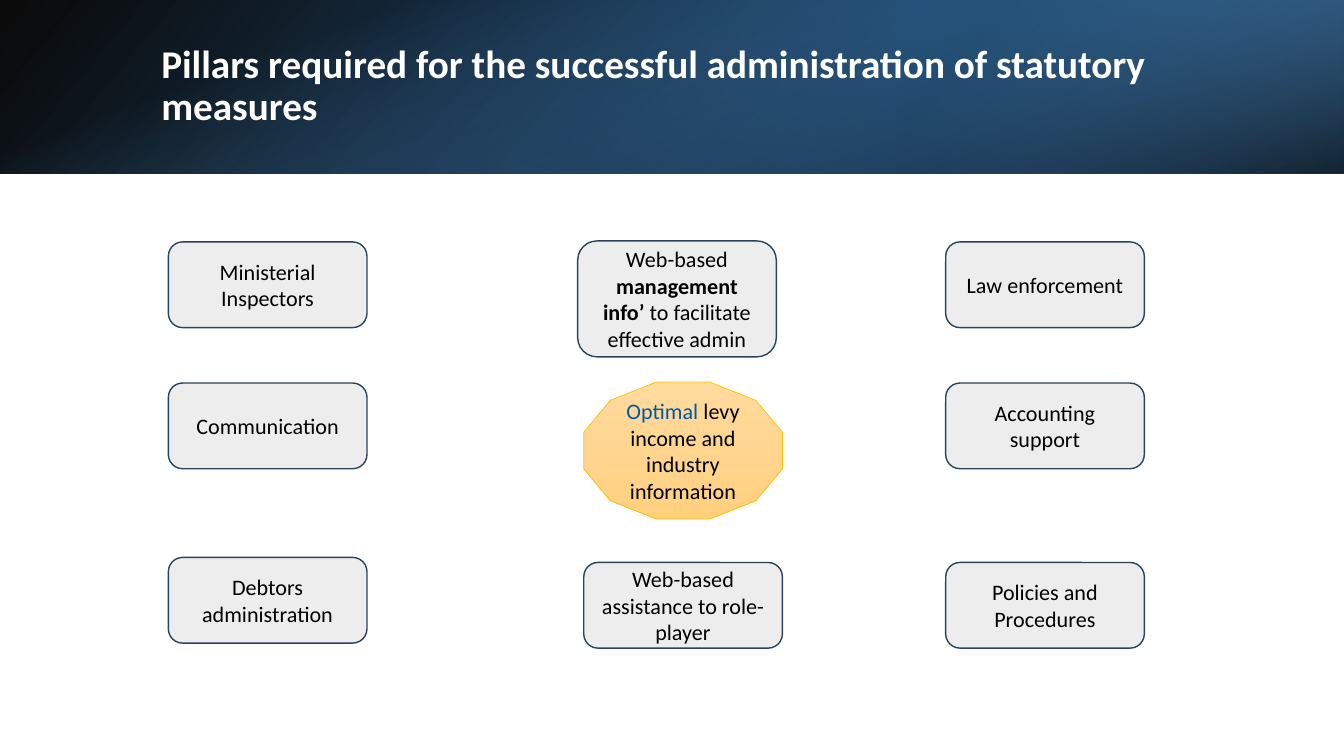
from dataclasses import dataclass

from lxml.etree import SubElement
from pptx import Presentation
from pptx.dml.color import RGBColor
from pptx.enum.shapes import MSO_SHAPE
from pptx.enum.text import MSO_ANCHOR, MSO_AUTO_SIZE, PP_ALIGN
from pptx.oxml.ns import qn
from pptx.shapes.autoshape import Shape
from pptx.slide import Slide
from pptx.text.text import TextFrame
from pptx.util import Inches, Pt


@dataclass(frozen=True)
class Theme:
    font: str = "Calibri"
    title_size: float = 28
    body_size: float = 15.8
    title: str = "FFFFFF"
    text: str = "000000"
    accent: str = "0057A5"
    pillar_fill: str = "EDEDED"
    pillar_line: str = "28445D"
    goal_line: str = "FFC000"


@dataclass(frozen=True)
class Stop:
    position: int
    color: str
    opacity: int = 100


@dataclass(frozen=True)
class Band:
    left: float
    top: float
    width: float
    height: float
    angle: int
    stops: tuple[Stop, ...]
    rotation: int = 0
    flipped: bool = False


@dataclass(frozen=True)
class Run:
    text: str
    bold: bool = False
    color: str | None = None


@dataclass(frozen=True)
class Pillar:
    left: float
    top: float
    runs: tuple[Run, ...]
    height: float = 0.85


THEME = Theme()
SLIDE_WIDTH, SLIDE_HEIGHT = 13.33, 7.5
BAND_HEIGHT = 1.72
PILLAR_WIDTH = 1.97
LEFT, MIDDLE, RIGHT = 1.67, 5.79, 9.38
TOP_ROW, CENTER_ROW, BOTTOM_ROW = 2.4, 3.8, 5.58
TITLE = "Pillars required for the successful administration of statutory measures"

BANDS = (
    Band(0, 0, SLIDE_WIDTH, BAND_HEIGHT, 140,
         (Stop(0, "000000", 96), Stop(100, "2E75B6")), flipped=True),
    Band(8.89, 0, 4.44, BAND_HEIGHT, 320,
         (Stop(19, "1F4E79", 68), Stop(100, "5B9BD5", 79)), rotation=180, flipped=True),
    Band((SLIDE_WIDTH - BAND_HEIGHT) / 2, (BAND_HEIGHT - SLIDE_WIDTH) / 2,
         BAND_HEIGHT, SLIDE_WIDTH, 340,
         (Stop(23, "5B9BD5", 0), Stop(99, "000000", 74)), rotation=90),
)
GOAL_STOPS = (Stop(0, "FFDB9E"), Stop(50, "FFD590"), Stop(100, "FFD07C"))
GOAL_RUNS = (Run("Optimal", color=THEME.accent), Run(" levy income and industry information"))
PILLARS = (
    Pillar(LEFT, TOP_ROW, (Run("Ministerial Inspectors"),)),
    Pillar(LEFT, CENTER_ROW, (Run("Communication"),)),
    Pillar(LEFT, 5.53, (Run("Debtors administration"),)),
    Pillar(5.73, 2.39, (Run("Web-based "), Run("management info’", bold=True),
                        Run(" to facilitate effective admin")), height=1.15),
    Pillar(MIDDLE, BOTTOM_ROW, (Run("Web-based assistance to role-player"),)),
    Pillar(RIGHT, TOP_ROW, (Run("Law enforcement"),)),
    Pillar(RIGHT, CENTER_ROW, (Run("Accounting support"),)),
    Pillar(RIGHT, BOTTOM_ROW, (Run("Policies and Procedures"),)),
)


def write_text(frame: TextFrame, runs: tuple[Run, ...], *, size: float, color: str,
               align: PP_ALIGN = PP_ALIGN.CENTER, space_after: float = 6,
               line_spacing: float = 1.0) -> None:
    frame.word_wrap = True
    frame.auto_size = MSO_AUTO_SIZE.NONE
    frame.vertical_anchor = MSO_ANCHOR.MIDDLE
    paragraph = frame.paragraphs[0]
    paragraph.alignment = align
    paragraph.space_after = Pt(space_after)
    paragraph.line_spacing = line_spacing
    for item in runs:
        run = paragraph.add_run()
        run.text = item.text
        run.font.name = THEME.font
        run.font.size = Pt(size)
        run.font.bold = item.bold
        run.font.color.rgb = RGBColor.from_string(item.color or color)


def set_gradient(shape: Shape, stops: tuple[Stop, ...], angle: int) -> None:
    """Fill with a linear gradient whose stops may be translucent."""
    shape.fill.gradient()
    gradient = shape.element.spPr.find(qn("a:gradFill"))
    for child in list(gradient):
        gradient.remove(child)
    gradient.set("rotWithShape", "1")
    stop_list = SubElement(gradient, qn("a:gsLst"))
    for stop in stops:
        node = SubElement(stop_list, qn("a:gs"), pos=str(stop.position * 1000))
        color = SubElement(node, qn("a:srgbClr"), val=stop.color)
        if stop.opacity < 100:
            SubElement(color, qn("a:alpha"), val=str(stop.opacity * 1000))
    SubElement(gradient, qn("a:lin"), ang=str(angle * 60000), scaled="0")


def add_plain_shape(slide: Slide, kind: MSO_SHAPE, left: float, top: float,
                    width: float, height: float) -> Shape:
    shape = slide.shapes.add_shape(kind, Inches(left), Inches(top), Inches(width), Inches(height))
    shape.shadow.inherit = False
    return shape


def set_outline(shape: Shape, color: str, width: float) -> None:
    shape.line.color.rgb = RGBColor.from_string(color)
    shape.line.width = Pt(width)


def add_band(slide: Slide, band: Band) -> None:
    shape = add_plain_shape(slide, MSO_SHAPE.RECTANGLE, band.left, band.top, band.width, band.height)
    shape.rotation = band.rotation
    if band.flipped:
        shape.element.spPr.find(qn("a:xfrm")).set("flipH", "1")
    set_gradient(shape, band.stops, band.angle)
    shape.line.fill.background()


def add_title(slide: Slide) -> None:
    title = slide.shapes.title
    title.left, title.top = Inches(1.5), Inches(0.38)
    title.width, title.height = Inches(10.98), Inches(0.96)
    write_text(title.text_frame, (Run(TITLE, bold=True),), size=THEME.title_size,
               color=THEME.title, align=PP_ALIGN.LEFT, space_after=0, line_spacing=0.9)
    # Bring the title in front of the header bands
    title.element.getparent().append(title.element)


def add_goal(slide: Slide) -> None:
    goal = add_plain_shape(slide, MSO_SHAPE.DODECAGON, MIDDLE, 3.79, PILLAR_WIDTH, 1.36)
    set_gradient(goal, GOAL_STOPS, 90)
    set_outline(goal, THEME.goal_line, 0.5)
    write_text(goal.text_frame, GOAL_RUNS, size=THEME.body_size, color=THEME.text)


def add_pillar(slide: Slide, pillar: Pillar) -> None:
    shape = add_plain_shape(slide, MSO_SHAPE.FLOWCHART_ALTERNATE_PROCESS,
                            pillar.left, pillar.top, PILLAR_WIDTH, pillar.height)
    shape.fill.solid()
    shape.fill.fore_color.rgb = RGBColor.from_string(THEME.pillar_fill)
    set_outline(shape, THEME.pillar_line, 1)
    write_text(shape.text_frame, pillar.runs, size=THEME.body_size, color=THEME.text)


def main() -> None:
    presentation = Presentation()
    presentation.slide_width = Inches(SLIDE_WIDTH)
    presentation.slide_height = Inches(SLIDE_HEIGHT)
    slide = presentation.slides.add_slide(presentation.slide_layouts.get_by_name("Title Only"))
    for band in BANDS:
        add_band(slide, band)
    add_title(slide)
    add_goal(slide)
    for pillar in PILLARS:
        add_pillar(slide, pillar)
    presentation.save("out.pptx")


if __name__ == "__main__":
    main()
